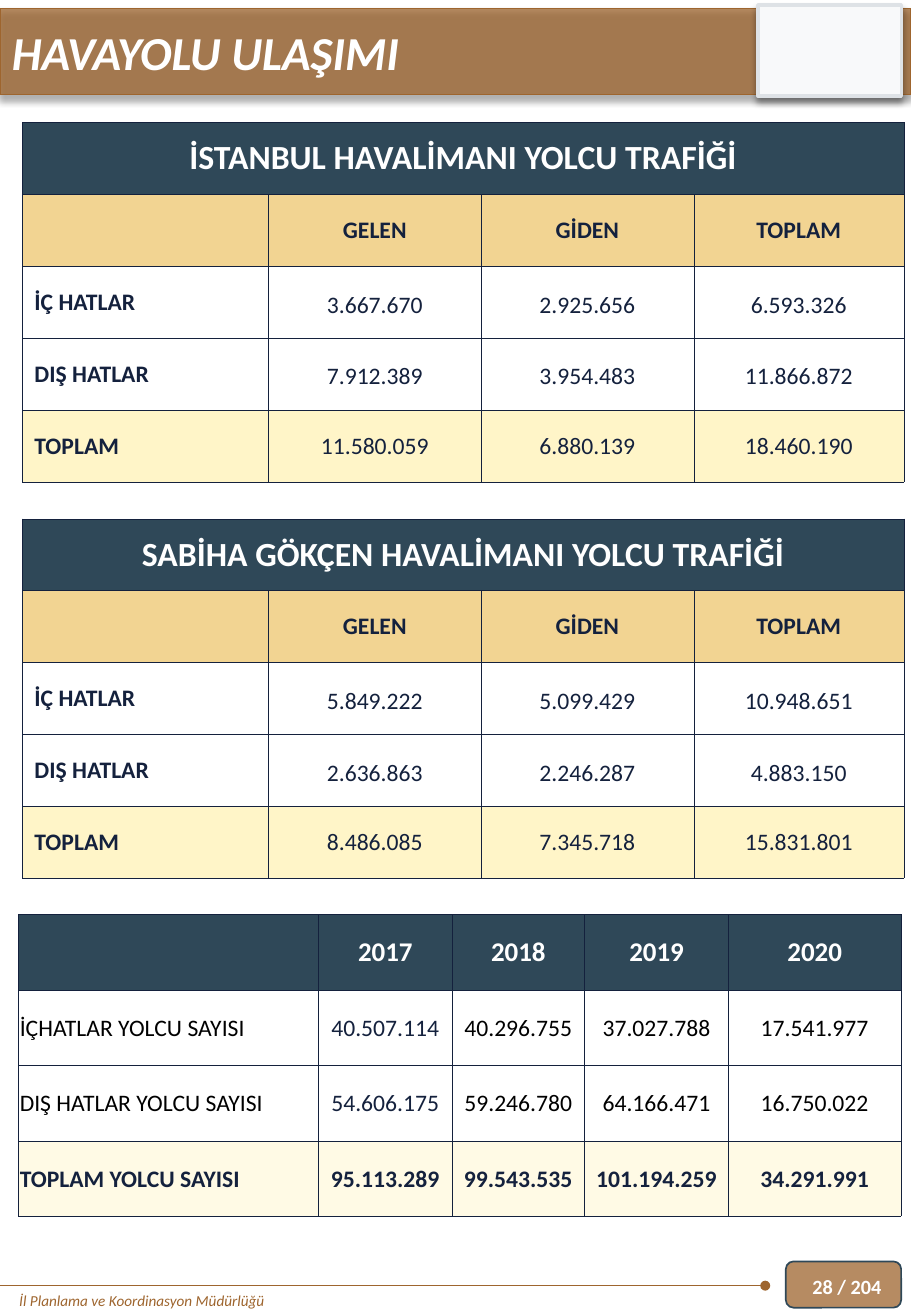
from dataclasses import dataclass, replace

import lxml.etree
import pptx
import pptx.dml.color
import pptx.enum.shapes
import pptx.enum.text
import pptx.oxml.ns
import pptx.util

Pt = pptx.util.Pt
Align = pptx.enum.text.PP_ALIGN
Anchor = pptx.enum.text.MSO_ANCHOR
Shape = pptx.enum.shapes.MSO_SHAPE


@dataclass(frozen=True)
class Theme:
    font: str = "Calibri"
    brown: str = "9E652E"
    slate: str = "2F4858"
    navy: str = "14213D"
    gold: str = "F2D492"
    cream: str = "FFF5C8"
    ivory: str = "FFFAE5"
    white: str = "FFFFFF"
    black: str = "000000"
    panel: str = "F8F9FA"
    panel_edge: str = "DEE2E6"
    title: float = 28
    table_title: float = 20
    year: float = 16
    body: float = 14
    page: float = 12
    footer: float = 9
    gap: float = 8


THEME = Theme()


@dataclass(frozen=True)
class CellStyle:
    fill: str = THEME.white
    size: float = THEME.body
    color: str = THEME.navy
    bold: bool = False
    align: Align = Align.CENTER
    line_spacing: float | None = None
    snug: bool = False
    side_borders: bool = True


@dataclass(frozen=True)
class Row:
    texts: tuple[str, ...]
    styles: tuple[CellStyle, ...]
    height: float
    spans: bool = False


@dataclass(frozen=True)
class Box:
    preset: Shape
    bounds: tuple[float, float, float, float]
    fill: str
    edge: str
    edge_width: float
    opacity: int | None = None
    shadow: bool = False


def rgb(color: str) -> pptx.dml.color.RGBColor:
    return pptx.dml.color.RGBColor.from_string(color)


def add_element(parent, tag: str, **attributes):
    element = lxml.etree.SubElement(parent, pptx.oxml.ns.qn(tag))
    for name, value in attributes.items():
        element.set(name, str(value))
    return element


def write_text(frame, text: str, *, size: float, color: str, bold: bool = False,
               italic: bool = False, align: Align = Align.LEFT,
               line_spacing: float | None = None) -> None:
    paragraph = frame.paragraphs[0]
    paragraph.alignment = align
    if line_spacing:
        paragraph.line_spacing = line_spacing
    if not text:
        add_element(paragraph._p, "a:endParaRPr", sz=int(size * 100))
        return
    run = paragraph.add_run()
    run.text = text
    font = run.font
    font.name, font.size, font.bold, font.italic = THEME.font, Pt(size), bold, italic
    font.color.rgb = rgb(color)


def add_text_box(slide, text: str, bounds: tuple[float, ...], anchor: Anchor = Anchor.TOP,
                 **text_format) -> None:
    frame = slide.shapes.add_textbox(*map(Pt, bounds)).text_frame
    frame.word_wrap = True
    frame.vertical_anchor = anchor
    write_text(frame, text, **text_format)


def add_box(slide, box: Box) -> None:
    shape = slide.shapes.add_shape(box.preset, *map(Pt, box.bounds))
    shape.shadow.inherit = False
    shape.fill.solid()
    shape.fill.fore_color.rgb = rgb(box.fill)
    shape.line.color.rgb = rgb(box.edge)
    shape.line.width = Pt(box.edge_width)
    properties = shape._element.spPr
    if box.opacity:
        color = properties.find(pptx.oxml.ns.qn("a:solidFill"))[0]
        add_element(color, "a:alpha", val=box.opacity * 1000)
    if box.shadow:
        effects = properties.find(pptx.oxml.ns.qn("a:effectLst"))
        shadow = add_element(effects, "a:outerShdw", blurRad=Pt(4), dist=Pt(3),
                             dir=90 * 60000, algn="t", rotWithShape=0)
        color = add_element(shadow, "a:srgbClr", val=THEME.black)
        add_element(color, "a:alpha", val=40000)


def add_footer_rule(slide) -> None:
    rule = slide.shapes.add_connector(pptx.enum.shapes.MSO_CONNECTOR.STRAIGHT,
                                      Pt(453.6), Pt(761.8), Pt(0), Pt(761.8))
    rule.line.color.rgb = rgb(THEME.brown)
    rule.line.width = Pt(0.5)
    add_element(rule.line._get_or_add_ln(), "a:headEnd", type="oval")
    add_element(rule._element.spPr, "a:effectLst")


def format_cell(cell, text: str, style: CellStyle) -> None:
    properties = cell._tc.get_or_add_tcPr()
    for side in "LRTB":
        line = add_element(properties, f"a:ln{side}", w=Pt(0.25))
        if side in "LR" and not style.side_borders:
            add_element(line, "a:noFill")
        else:
            add_element(add_element(line, "a:solidFill"), "a:srgbClr", val=THEME.navy)
    cell.fill.solid()
    cell.fill.fore_color.rgb = rgb(style.fill)
    cell.vertical_anchor = Anchor.MIDDLE
    if style.snug:
        cell.margin_left = cell.margin_right = cell.margin_top = Pt(0.72)
        cell.margin_bottom = Pt(0)
    write_text(cell.text_frame, text, size=style.size, color=style.color, bold=style.bold,
               align=style.align, line_spacing=style.line_spacing)


def add_table(slide, left: float, top: float, widths: list[float], rows: list[Row]) -> None:
    height = sum(row.height for row in rows)
    table = slide.shapes.add_table(len(rows), len(widths), Pt(left), Pt(top),
                                   Pt(sum(widths)), Pt(height)).table
    table.first_row = table.horz_banding = False
    for column, width in zip(table.columns, widths):
        column.width = Pt(width)
    for index, row in enumerate(rows):
        table.rows[index].height = Pt(row.height)
        if row.spans:
            table.cell(index, 0).merge(table.cell(index, len(widths) - 1))
        for position, (text, style) in enumerate(zip(row.texts, row.styles)):
            format_cell(table.cell(index, position), text, style)


def airport_rows(airport: str, domestic: str, international: str, total: str) -> list[Row]:
    """Title, heading and three figure rows; figures are separated by spaces."""
    height = 42.6
    title = CellStyle(THEME.slate, THEME.table_title, THEME.white, True)
    heading = CellStyle(THEME.gold, bold=True)
    label = CellStyle(bold=True, align=Align.LEFT)
    value = CellStyle(line_spacing=1.15, snug=True)
    total_label = replace(label, fill=THEME.cream)
    total_value = CellStyle(THEME.cream, snug=True)
    return [
        Row((f"{airport} HAVALİMANI YOLCU TRAFİĞİ", "", "", ""), (title,) * 4, height, True),
        Row(("", "GELEN", "GİDEN", "TOPLAM"), (heading,) * 4, height),
        Row(("İÇ HATLAR", *domestic.split()), (label, *[value] * 3), height),
        Row(("DIŞ HATLAR", *international.split()), (label, *[value] * 3), height),
        Row(("TOPLAM", *total.split()), (total_label, *[total_value] * 3), height),
    ]


def yearly_rows() -> list[Row]:
    height = 44.75
    year = CellStyle(THEME.slate, THEME.year, THEME.white, True, snug=True)
    first = CellStyle(snug=True)
    value = replace(first, color=THEME.black)
    label = replace(value, align=Align.JUSTIFY)
    total = CellStyle(THEME.ivory, bold=True, snug=True)
    body = (label, first, value, value, value)
    return [
        Row(("", "2017", "2018", "2019", "2020"), (year,) * 5, height),
        Row(("İÇHATLAR YOLCU SAYISI", "40.507.114", "40.296.755", "37.027.788", "17.541.977"),
            body, height),
        Row(("DIŞ HATLAR YOLCU SAYISI", "54.606.175", "59.246.780", "64.166.471",
             "16.750.022"), body, height),
        Row(("TOPLAM YOLCU SAYISI", "95.113.289", "99.543.535", "101.194.259", "34.291.991"),
            (replace(total, align=Align.JUSTIFY), *[total] * 4), height),
    ]


def main() -> None:
    presentation = pptx.Presentation()
    presentation.slide_width, presentation.slide_height = Pt(540), Pt(779.76)
    slide = presentation.slides.add_slide(presentation.slide_layouts[6])
    slide.background.fill.solid()
    slide.background.fill.fore_color.rgb = rgb(THEME.white)
    for box in (
        Box(Shape.ROUNDED_RECTANGLE, (465.8, 747.4, 68.4, 27.4), THEME.brown, THEME.slate, 1, 75),
        Box(Shape.RECTANGLE, (0, 5, 540, 51.1), THEME.brown, THEME.brown, 1, 75, True),
        Box(Shape.RECTANGLE, (449.3, 2.9, 85, 54), THEME.panel, THEME.panel_edge, 2, None, True),
    ):
        add_box(slide, box)
    add_footer_rule(slide)
    add_text_box(slide, "İl Planlama ve Koordinasyon Müdürlüğü", (4.3, 761.8, 337.7, 18),
                 size=THEME.footer, color=THEME.brown, italic=True)
    add_text_box(slide, "HAVAYOLU ULAŞIMI", (0, 10.1, 540, 41),
                 size=THEME.title, color=THEME.white, bold=True, italic=True)
    add_text_box(slide, "28 / 204", (474.5, 747.4, 82.8, 30.2), Anchor.MIDDLE,
                 size=THEME.page, color=THEME.white, bold=True)
    gap_style = CellStyle(size=THEME.gap, snug=True, side_borders=False)
    airports = [
        *airport_rows("İSTANBUL", "3.667.670 2.925.656 6.593.326",
                      "7.912.389 3.954.483 11.866.872", "11.580.059 6.880.139 18.460.190"),
        Row(("",) * 4, (gap_style,) * 4, 21.9, True),
        *airport_rows("SABİHA GÖKÇEN", "5.849.222 5.099.429 10.948.651",
                      "2.636.863 2.246.287 4.883.150", "8.486.085 7.345.718 15.831.801"),
    ]
    add_table(slide, 13.2, 72.6, [146, 126, 126, 124.6], airports)
    add_table(slide, 11, 541.7, [177.8, 79.2, 78.5, 85.4, 102.1], yearly_rows())
    presentation.save("out.pptx")


if __name__ == "__main__":
    main()
